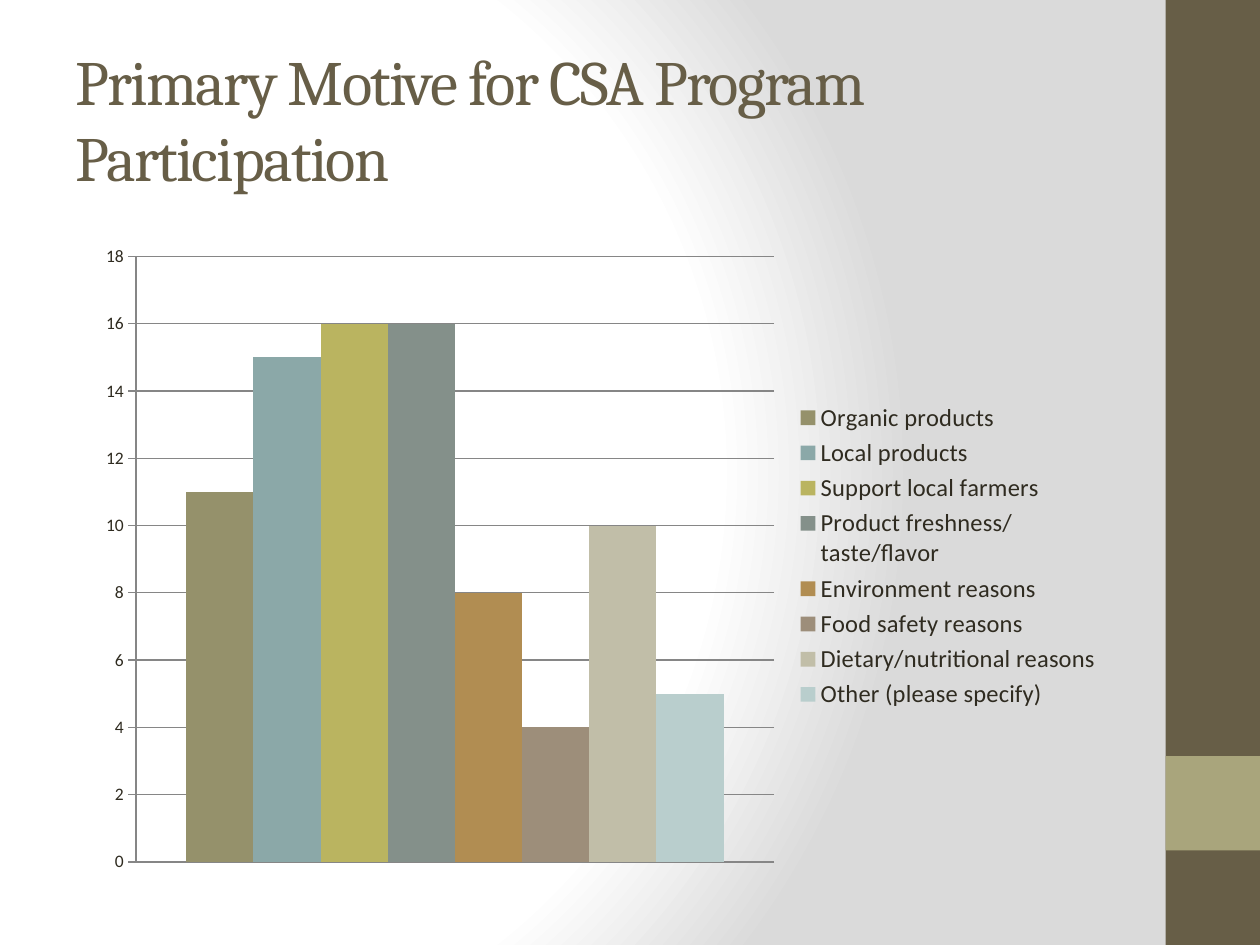
import lxml.etree
import pptx
import pptx.chart.data
import pptx.dml.color
import pptx.enum.chart
import pptx.enum.text
import pptx.oxml
import pptx.oxml.ns
import pptx.util

WIDTH, HEIGHT = pptx.util.Inches(10), pptx.util.Inches(7.5)
BROWN, INK, GRID = "675E47", "2F2B20", "868686"
MOTIVES = [
    ("Organic products", 11, "95916B"),
    ("Local products", 15, "8BA8A8"),
    ("Support local farmers", 16, "BAB460"),
    ("Product freshness/taste/flavor", 16, "84908A"),
    ("Environment reasons", 8, "B18D52"),
    ("Food safety reasons", 4, "9D8E7A"),
    ("Dietary/nutritional reasons", 10, "C1BEA8"),
    ("Other (please specify)", 5, "B9CECD"),
]
BACKDROP = [(0, "FFFFFF"), (75, "FFFFFF"), (100, "DADADA")]


def color(hex_code):
    """Return the colour for a hex string."""
    return pptx.dml.color.RGBColor.from_string(hex_code)


def apply(target, **values):
    """Set each given value as an attribute of the target."""
    for name, value in values.items():
        setattr(target, name, value)


def place(left, top, width, height):
    """Turn shares of the slide's size into a position and size."""
    shares = zip((left, top, width, height), (WIDTH, HEIGHT) * 2)
    return [round(share * length) for share, length in shares]


def style_font(font, size, hex_code, name):
    """Give a font its size, colour and typeface."""
    apply(font, size=pptx.util.Pt(size), name=name, bold=False)
    font.color.rgb = color(hex_code)


def paint_background(page):
    """Fill the page with a circular gradient centred on the left."""
    stops = "".join(
        f'<a:gs pos="{share * 1000}"><a:srgbClr val="{hex_code}"/></a:gs>'
        for share, hex_code in BACKDROP
    )
    page.background.fill.solid()
    solid = page.background.fill._xPr.find(pptx.oxml.ns.qn("a:solidFill"))
    gradient = pptx.oxml.parse_xml(
        f'<a:gradFill {pptx.oxml.ns.nsdecls("a")} rotWithShape="1">'
        f'<a:gsLst>{stops}</a:gsLst><a:path path="circle">'
        '<a:fillToRect l="20000" t="50000" r="100000" b="50000"/>'
        "</a:path></a:gradFill>"
    )
    solid.getparent().replace(solid, gradient)


def add_block(page, area, hex_code):
    """Add a plain rectangle without outline."""
    block = page.shapes.add_shape(1, *place(*area))
    block.shadow.inherit = False
    block.fill.solid()
    block.fill.fore_color.rgb = color(hex_code)
    block.line.fill.background()


def set_title(page, text, area):
    """Write, move and format the title."""
    title = page.shapes.title
    apply(title, **dict(zip(("left", "top", "width", "height"), place(*area))))
    frame = title.text_frame
    apply(frame, text=text, word_wrap=True,
          vertical_anchor=pptx.enum.text.MSO_ANCHOR.MIDDLE,
          auto_size=pptx.enum.text.MSO_AUTO_SIZE.NONE)
    para = frame.paragraphs[0]
    para.alignment = pptx.enum.text.PP_ALIGN.LEFT
    span = para.runs[0]
    style_font(span.font, 36, BROWN, "Cambria")
    span.font._element.set("spc", "-100")


def set_plot_area(chart, **shares):
    """Fix the inner plot area as shares of the chart."""
    area = chart._chartSpace.chart.plotArea
    for old in area.findall(pptx.oxml.ns.qn("c:layout")):
        area.remove(old)
    layout = lxml.etree.Element(pptx.oxml.ns.qn("c:layout"))
    manual = lxml.etree.SubElement(layout, pptx.oxml.ns.qn("c:manualLayout"))
    values = {"layoutTarget": "inner", "xMode": "edge", "yMode": "edge", **shares}
    for name, value in values.items():
        lxml.etree.SubElement(manual, pptx.oxml.ns.qn(f"c:{name}"), val=str(value))
    area.insert(0, layout)


def style_axes(chart):
    """Hide the category axis and format the value axis with its grid."""
    chart.category_axis.visible = False
    axis = chart.value_axis
    apply(axis, minimum_scale=0, maximum_scale=18, major_unit=2,
          has_major_gridlines=True,
          major_tick_mark=pptx.enum.chart.XL_TICK_MARK.OUTSIDE)
    for line in (axis.format.line, axis.major_gridlines.format.line):
        line.color.rgb = color(GRID)
        line.width = pptx.util.Pt(0.75)


def add_motive_chart(page, area):
    """Add the column chart with one series for each motive."""
    data = pptx.chart.data.CategoryChartData()
    data.categories = ["1"]
    for name, count, _ in MOTIVES:
        data.add_series(name, [count])
    kind = pptx.enum.chart.XL_CHART_TYPE.COLUMN_CLUSTERED
    chart = page.shapes.add_chart(kind, *place(*area), data).chart
    apply(chart, has_title=False, has_legend=True)
    style_font(chart.font, 10, INK, "Calibri")
    apply(chart.legend, include_in_layout=False,
          position=pptx.enum.chart.XL_LEGEND_POSITION.RIGHT)
    style_font(chart.legend.font, 14, INK, "Calibri")
    apply(chart.plots[0], gap_width=150, overlap=0, vary_by_categories=False)
    for series, (_, _, hex_code) in zip(chart.plots[0].series, MOTIVES):
        series.format.fill.solid()
        series.format.fill.fore_color.rgb = color(hex_code)
    style_axes(chart)
    set_plot_area(chart, x=0.05, y=0.04, w=0.62, h=0.93)


def main():
    """Build the slide and save the deck."""
    deck = pptx.Presentation()
    apply(deck, slide_width=WIDTH, slide_height=HEIGHT)
    page = deck.slides.add_slide(deck.slide_layouts.get_by_name("Title Only"))
    paint_background(page)
    add_block(page, (0.925, 0, 0.075, 1), BROWN)
    add_block(page, (0.925, 0.8, 0.075, 0.1), "A9A57C")
    set_title(page, "Primary Motive for CSA Program Participation",
              (0.05, 0.04, 0.83, 0.17))
    add_motive_chart(page, (0.067, 0.244, 0.817, 0.689))
    deck.save("out.pptx")


if __name__ == "__main__":
    main()
